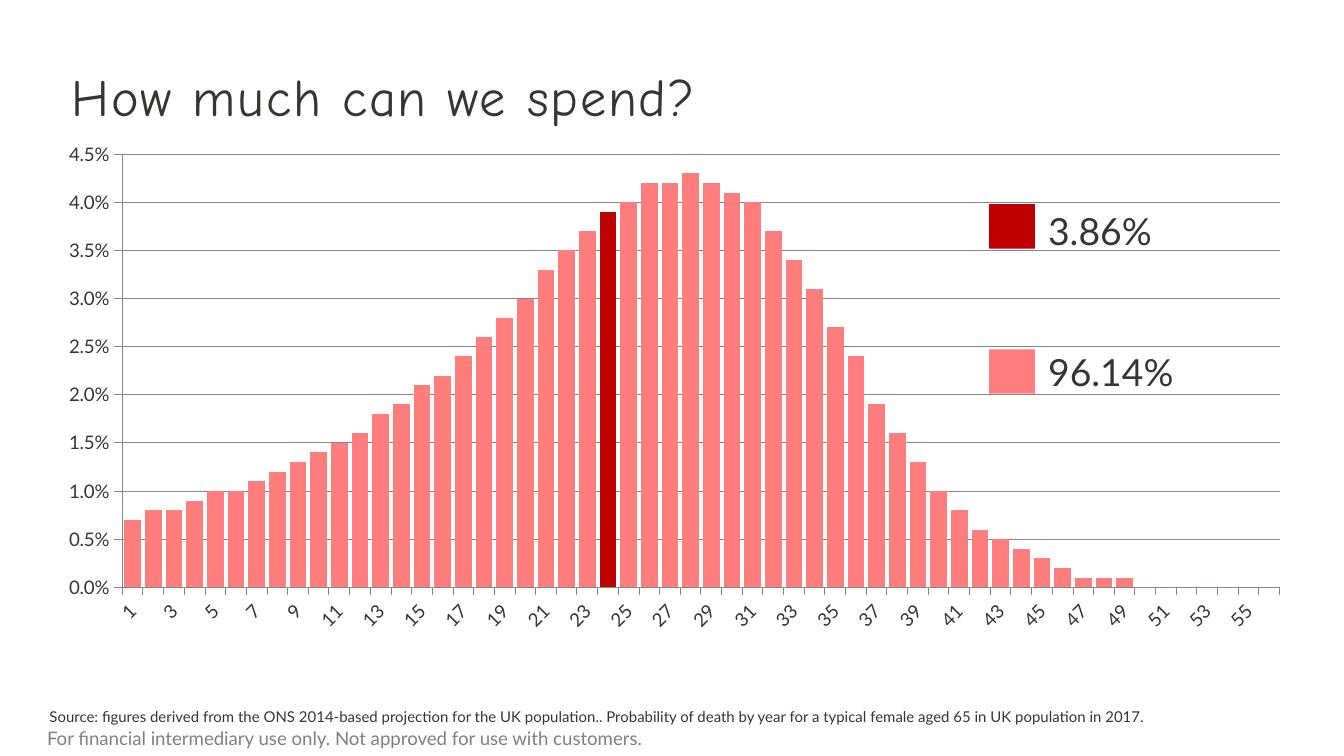
import pptx
import pptx.util
import pptx.dml.color
import pptx.chart.data
import pptx.enum.chart
import pptx.enum.shapes
import pptx.enum.text
import pptx.oxml

PX = 4572
INK = "373433"
ROSE = "FF7D7D"
GRID = "868686"
MARK = 23
RATES = [
    0.007, 0.008, 0.008, 0.009, 0.01, 0.01, 0.011, 0.012, 0.013, 0.014,
    0.015, 0.016, 0.018, 0.019, 0.021, 0.022, 0.024, 0.026, 0.028, 0.03,
    0.033, 0.035, 0.037, 0.039, 0.04, 0.042, 0.042, 0.043, 0.042, 0.041,
    0.04, 0.037, 0.034, 0.031, 0.027, 0.024, 0.019, 0.016, 0.013, 0.01,
    0.008, 0.006, 0.005, 0.004, 0.003, 0.002, 0.001, 0.001, 0.001, 0,
    0, 0, 0, 0, 0, 0,
]


def scale(*box):
    """Turn px lengths into EMU."""
    return [pptx.util.Emu(n * PX) for n in box]


def tint(code):
    """Return the colour for a hex string."""
    return pptx.dml.color.RGBColor.from_string(code)


def node(name, rest):
    """Parse a chart element from its name and the rest of its markup."""
    ns = "http://schemas.openxmlformats.org/drawingml/2006/chart"
    return pptx.oxml.parse_xml(f'<c:{name} xmlns:c="{ns}"{rest}</c:{name}>')


def write(slide, box, text, size=10, font="Lato", color=INK, pad=(20, 10, 20, 10),
          anchor="TOP", wrap=True, lead=None, after=None, track=None):
    """Add a text box with one formatted paragraph."""
    frame = slide.shapes.add_textbox(*scale(*box)).text_frame
    frame.word_wrap = wrap
    frame.vertical_anchor = getattr(pptx.enum.text.MSO_ANCHOR, anchor)
    (frame.margin_left, frame.margin_top,
     frame.margin_right, frame.margin_bottom) = scale(*pad)
    para = frame.paragraphs[0]
    if lead:
        para.line_spacing = pptx.util.Pt(lead)
    if after:
        para.space_after = pptx.util.Pt(after)
    run = para.add_run()
    run.text = text
    run.font.size = pptx.util.Pt(size)
    run.font.name = font
    run.font.color.rgb = tint(color)
    if track:
        run._r.get_or_add_rPr().set("spc", str(track))


def rule(line):
    """Set the colour and width of a chart line."""
    line.color.rgb = tint(GRID)
    line.width = pptx.util.Pt(0.5)


def style(axis):
    """Set the line, tick marks and label size of an axis."""
    rule(axis.format.line)
    axis.major_tick_mark = pptx.enum.chart.XL_TICK_MARK.OUTSIDE
    axis.minor_tick_mark = pptx.enum.chart.XL_TICK_MARK.NONE
    axis.tick_labels.font.size = pptx.util.Pt(10)


def place(chart, **parts):
    """Fix the inner plot area as shares of the chart."""
    plot = chart._chartSpace.chart.plotArea
    for old in plot.xpath("c:layout"):
        plot.remove(old)
    rules = {"layoutTarget": "inner", "xMode": "edge", "yMode": "edge", **parts}
    inner = "".join(f'<c:{key} val="{val}"/>' for key, val in rules.items())
    plot.insert(0, node("layout", f"><c:manualLayout>{inner}</c:manualLayout>"))


def graph(slide, box):
    """Draw the yearly rates as columns with one marked year."""
    data = pptx.chart.data.CategoryChartData(number_format="0.0%")
    data.categories = [str(n + 1) for n in range(len(RATES))]
    data.add_series("Series 1", RATES)
    kind = pptx.enum.chart.XL_CHART_TYPE.COLUMN_CLUSTERED
    chart = slide.shapes.add_chart(kind, *scale(*box), data).chart
    chart.has_legend = chart.has_title = False
    chart.font.size = pptx.util.Pt(10)
    chart.font.name = "Lato"
    chart.font.color.rgb = tint(INK)
    place(chart, x=0.084, y=0.051, w=0.898, h=0.833)

    plot = chart.plots[0]
    plot.gap_width = 25
    plot.vary_by_categories = False
    bars = plot.series[0]
    bars.invert_if_negative = False
    for part, code in ((bars, ROSE), (bars.points[MARK], "BE0000")):
        part.format.fill.solid()
        part.format.fill.fore_color.rgb = tint(code)

    years, share = chart.category_axis, chart.value_axis
    style(years)
    style(share)
    years.has_major_gridlines = False
    years._element.xpath("c:txPr/a:bodyPr")[0].set("rot", "-2700000")
    last = years._element.xpath("c:noMultiLvlLbl")[0]
    last.addprevious(node("tickLblSkip", ' val="2">'))
    share.minimum_scale, share.maximum_scale, share.major_unit = 0, 0.045, 0.005
    share.tick_labels.number_format = "0.0%"
    share.tick_labels.number_format_is_linked = False
    share.has_major_gridlines = True
    rule(share.major_gridlines.format.line)


def key(slide, box, text, color, drop):
    """Draw a colour swatch with its share, set off by a drop."""
    left, top, wide, high = box
    shape = slide.shapes.add_shape(
        pptx.enum.shapes.MSO_SHAPE.RECTANGLE, *scale(left, top, 68, 66))
    shape.shadow.inherit = False
    shape.fill.solid()
    shape.fill.fore_color.rgb = tint(color)
    shape.line.fill.background()
    write(slide, (left + 68, top + drop, wide - 68, high), text, size=20, wrap=False)


def notes(slide, box):
    """Write the source line and the use notice."""
    left, top, wide, high = box
    write(slide, (left, top, wide, 74),
          "Source: figures derived from the ONS 2014-based projection for the UK "
          "population.. Probability of death by year for a typical female aged 65 "
          "in UK population in 2017.", size=8, lead=27, after=9)
    write(slide, (left + 8, top + high - 40, 1370, 40),
          "For financial intermediary use only. Not approved for use with customers.",
          color="808080", pad=(8, 10, 20, 10), anchor="MIDDLE")


def main():
    """Build and save the slide."""
    deck = pptx.Presentation()
    deck.slide_width, deck.slide_height = scale(2000, 1125)
    slide = deck.slides.add_slide(deck.slide_layouts[6])
    graph(slide, (21, 190, 1918, 774))
    key(slide, (1472, 304, 268, 88), "3.86%", "C00000", -4)
    key(slide, (1472, 520, 372, 88), "96.14%", ROSE, -10)
    notes(slide, (54, 995, 1686, 124))
    write(slide, (99, 63, 1572, 130), "How much can we spend?", size=28,
          font="Comic Neue", pad=(8, 4, 8, 4), anchor="BOTTOM", lead=32.4, track=100)
    deck.save("out.pptx")


if __name__ == "__main__":
    main()
